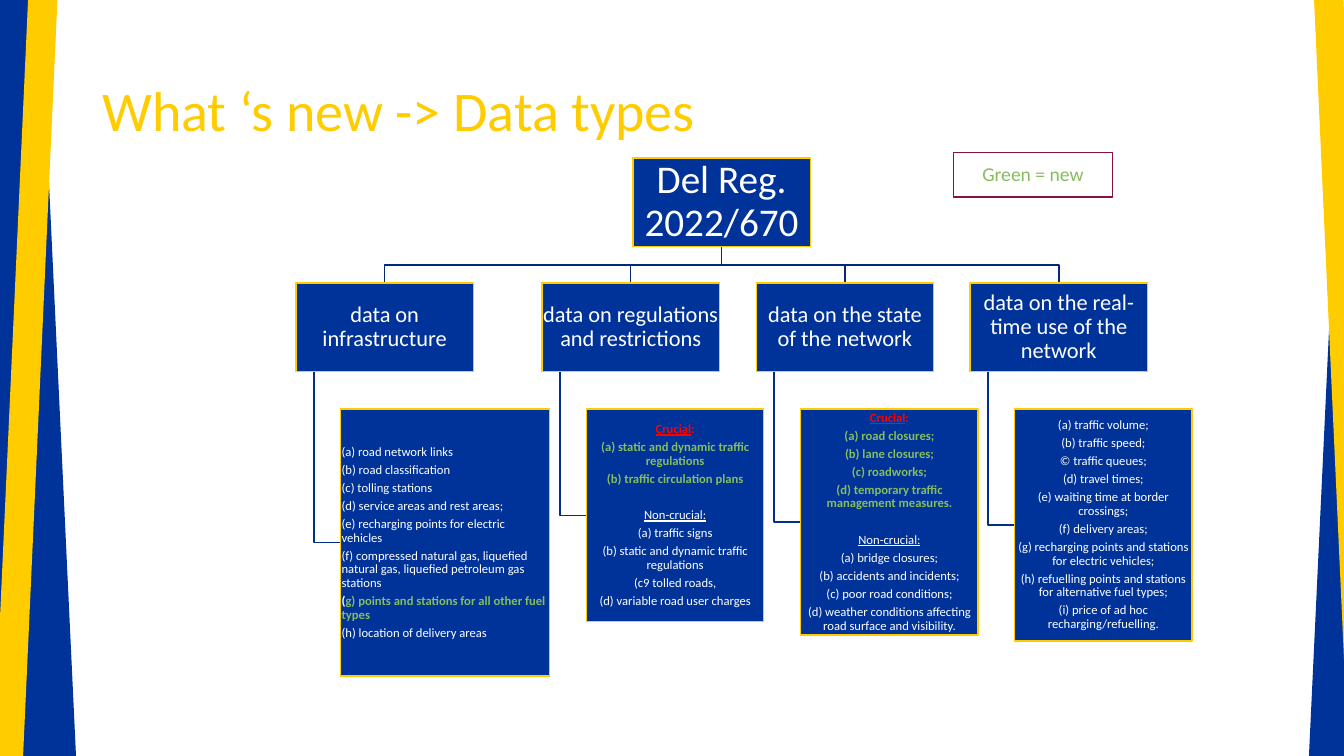
from dataclasses import dataclass

from pptx import Presentation
from pptx.dml.color import RGBColor
from pptx.enum.shapes import MSO_SHAPE
from pptx.enum.text import MSO_ANCHOR, MSO_AUTO_SIZE, PP_ALIGN
from pptx.util import Cm, Pt

RECTANGLE = MSO_SHAPE.RECTANGLE
MIDDLE = MSO_ANCHOR.MIDDLE
NO_AUTOFIT = MSO_AUTO_SIZE.NONE
LEFT, CENTER = PP_ALIGN.LEFT, PP_ALIGN.CENTER

BLUE, YELLOW, WHITE = "003399", "FFCC00", "FFFFFF"
GREEN, RED, PURPLE = "85BD5F", "FF0000", "871137"
TRUNK_LINE, DETAIL_LINE = "00297B", "002E8B"
FONT = "Calibri"
TITLE_ONLY = 5

BOX_WIDTH, BOX_HEIGHT = 4.47, 2.24
ROOT_LEFT, ROOT_TOP = 15.95, 3.98
BUS_TOP = 6.68
HEADING_TOP, DETAIL_TOP = 7.13, 10.31
STEM_INDENT, DETAIL_INDENT = 0.45, 1.12


@dataclass
class Run:
    text: str
    color: str = WHITE
    bold: bool = False
    underline: bool = False


@dataclass
class Line:
    runs: list[Run]
    space_before: float = 0


@dataclass
class Box:
    left: float
    top: float
    width: float
    height: float


@dataclass
class Branch:
    left: float
    heading: str
    detail_height: float
    lines: list[Line]
    detail_width: float = BOX_WIDTH
    align: PP_ALIGN = CENTER


@dataclass
class Bar:
    box: Box
    rotation: float
    color: str


def plain(*texts: str) -> list[Line]:
    return [Line([Run(text)]) for text in texts]


def green(*texts: str) -> list[Line]:
    return [Line([Run(text, GREEN, bold=True)]) for text in texts]


def crucial_split(crucial: list[str], other: list[str]) -> list[Line]:
    crucial_label = Line([Run("Crucial", RED, True, True), Run(":", RED, True)])
    other_label = Line([Run("Non-crucial:", underline=True)], space_before=13)
    return [crucial_label, *green(*crucial), other_label, *plain(*other)]


BARS = [
    Bar(Box(-0.41, -0.46, 1.88, 20.09), 357.3, BLUE),
    Bar(Box(0.28, -0.41, 0.74, 19.71), 2.6, YELLOW),
    Bar(Box(33.43, -0.36, 1.88, 20.09), 2.7, BLUE),
    Bar(Box(33.55, -0.33, 0.74, 19.71), 357.4, YELLOW),
]

BRANCHES = [
    Branch(7.46, "data on infrastructure", 6.73, [
        *plain("(a) road network links", "(b) road classification",
               "(c) tolling stations", "(d) service areas and rest areas;",
               "(e) recharging points for electric vehicles",
               "(f) compressed natural gas, liquefied natural gas, "
               "liquefied petroleum gas stations"),
        Line([Run("(", bold=True),
              Run("g) points and stations for all other fuel types", GREEN, True)]),
        *plain("(h) location of delivery areas"),
    ], detail_width=5.27, align=LEFT),
    Branch(13.66, "data on regulations and restrictions", 5.36, crucial_split(
        ["(a) static and dynamic traffic regulations",
         "(b) traffic circulation plans"],
        ["(a) traffic signs", "(b) static and dynamic traffic regulations",
         "(c9 tolled roads,", "(d) variable road user charges"])),
    Branch(19.06, "data on the state of the network", 5.69, crucial_split(
        ["(a) road closures;", "(b) lane closures;", "(c) roadworks;",
         "(d) temporary traffic management measures."],
        ["(a) bridge closures;", "(b) accidents and incidents;",
         "(c) poor road conditions;",
         "(d) weather conditions affecting road surface and visibility."])),
    Branch(24.45, "data on the real-time use of the network", 5.84, plain(
        "(a) traffic volume;", "(b) traffic speed;", "© traffic queues;",
        "(d) travel times;", "(e) waiting time at border crossings;",
        "(f) delivery areas;",
        "(g) recharging points and stations for electric vehicles;",
        "(h) refuelling points and stations for alternative fuel types;",
        "(i) price of ad hoc recharging/refuelling.")),
]


def rgb(color: str) -> RGBColor:
    return RGBColor.from_string(color)


def apply(target, values: dict) -> None:
    for name, value in values.items():
        setattr(target, name, value)


def draw_box(slide, box: Box, fill: str | None, line: str | None):
    shape = slide.shapes.add_shape(
        RECTANGLE, Cm(box.left), Cm(box.top), Cm(box.width), Cm(box.height))
    shape.shadow.inherit = False
    if fill:
        shape.fill.solid()
        shape.fill.fore_color.rgb = rgb(fill)
    else:
        shape.fill.background()
    if line:
        shape.line.color.rgb = rgb(line)
        shape.line.width = Pt(1)
    else:
        shape.line.fill.background()
    return shape


def write(shape, lines: list[Line], size: float, align: PP_ALIGN = CENTER,
          inset: float = 0.03) -> None:
    frame = shape.text_frame
    margins = {f"margin_{side}": Cm(inset) for side in ("left", "top", "right", "bottom")}
    apply(frame, {"word_wrap": True, "auto_size": NO_AUTOFIT,
                  "vertical_anchor": MIDDLE, **margins})
    for index, line in enumerate(lines):
        paragraph = frame.add_paragraph() if index else frame.paragraphs[0]
        apply(paragraph, {"alignment": align, "line_spacing": 0.9,
                          "space_before": Pt(line.space_before),
                          "space_after": Pt(size * 0.35)})
        for part in line.runs:
            run = paragraph.add_run()
            run.text = part.text
            apply(run.font, {"name": FONT, "size": Pt(size), "bold": part.bold,
                             "underline": part.underline})
            run.font.color.rgb = rgb(part.color)


def draw_path(slide, points: list[tuple[float, float]], color: str) -> None:
    start, *others = [(Cm(x), Cm(y)) for x, y in points]
    builder = slide.shapes.build_freeform(*start)
    builder.add_line_segments(others, close=False)
    shape = builder.convert_to_shape()
    shape.shadow.inherit = False
    shape.fill.background()
    shape.line.color.rgb = rgb(color)
    shape.line.width = Pt(1)


def draw_branch(slide, branch: Branch) -> None:
    root_center = ROOT_LEFT + BOX_WIDTH / 2
    center = branch.left + BOX_WIDTH / 2
    stem = branch.left + STEM_INDENT
    detail_left = branch.left + DETAIL_INDENT
    detail_middle = DETAIL_TOP + branch.detail_height / 2
    draw_path(slide, [(root_center, ROOT_TOP + BOX_HEIGHT), (root_center, BUS_TOP),
                      (center, BUS_TOP), (center, HEADING_TOP)], TRUNK_LINE)
    draw_path(slide, [(stem, HEADING_TOP + BOX_HEIGHT), (stem, detail_middle),
                      (detail_left, detail_middle)], DETAIL_LINE)
    heading_box = Box(branch.left, HEADING_TOP, BOX_WIDTH, BOX_HEIGHT)
    write(draw_box(slide, heading_box, BLUE, YELLOW), plain(branch.heading), 16)
    detail_box = Box(detail_left, DETAIL_TOP, branch.detail_width, branch.detail_height)
    write(draw_box(slide, detail_box, BLUE, YELLOW), branch.lines, 9, branch.align)


def main() -> None:
    presentation = Presentation()
    apply(presentation, {"slide_width": Cm(33.87), "slide_height": Cm(19.05)})
    slide = presentation.slides.add_slide(presentation.slide_layouts[TITLE_ONLY])
    title = slide.shapes.title
    apply(title, {"left": Cm(2.33), "top": Cm(1.01), "width": Cm(29.21), "height": Cm(3.68)})
    write(title, [Line([Run("What ‘s new -> Data types", YELLOW)])], 40, LEFT, 0.25)
    title.text_frame.paragraphs[0].space_after = Pt(0)

    for bar in BARS:
        draw_box(slide, bar.box, bar.color, None).rotation = bar.rotation
    for branch in BRANCHES:
        draw_branch(slide, branch)
    root = draw_box(slide, Box(ROOT_LEFT, ROOT_TOP, BOX_WIDTH, BOX_HEIGHT), BLUE, YELLOW)
    write(root, plain("Del Reg. 2022/670"), 28, inset=0.05)
    legend = draw_box(slide, Box(24.03, 3.85, 4.01, 1.12), None, PURPLE)
    write(legend, [Line([Run("Green = new", GREEN)])], 14)
    legend.text_frame.paragraphs[0].space_after = Pt(0)
    presentation.save("out.pptx")


if __name__ == "__main__":
    main()
